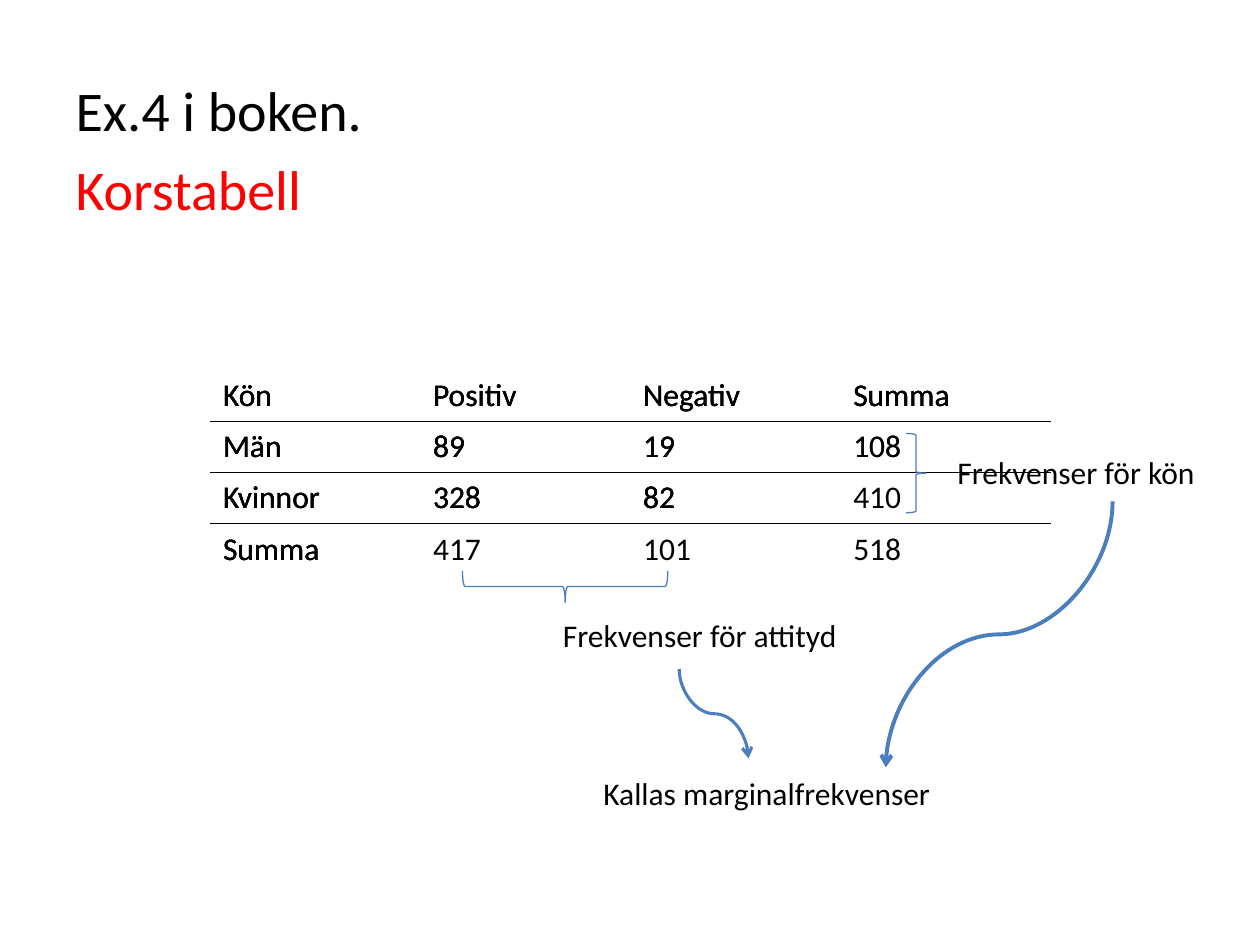
from lxml.etree import SubElement
from pptx import Presentation
from pptx.dml.color import RGBColor
from pptx.enum.shapes import MSO_CONNECTOR, MSO_SHAPE
from pptx.enum.text import MSO_ANCHOR, MSO_AUTO_SIZE, PP_ALIGN
from pptx.oxml import parse_xml
from pptx.oxml.ns import nsdecls, qn
from pptx.util import Inches, Pt

COLORS = {"text": "000000", "accent": "FF0000", "line": "4B7EBC"}
FONT = "Calibri"
NO_STYLE = "{2D5ABB26-0587-4C30-8999-92F81FD0307C}"

ROWS = [
    ["Kön", "Positiv", "Negativ", "Summa"],
    ["Män", "89", "19", "108"],
    ["Kvinnor", "328", "82", "410"],
    ["Summa", "417", "101", "518"],
]
RULED_ROWS = (1, 3)
# Cells left blank in each successive layer of the table
MARGINAL_CELLS = {(1, 3), (2, 3), (3, 1), (3, 2), (3, 3)}
BLANK_CELLS = [MARGINAL_CELLS, MARGINAL_CELLS - {(1, 3)}, set()]


def format_paragraph(paragraph, size, color="text"):
    paragraph.font.name = FONT
    paragraph.font.size = Pt(size)
    paragraph.font.bold = False
    paragraph.font.color.rgb = RGBColor.from_string(COLORS[color])


def place_title(slide, left, top, width, height):
    title = slide.shapes.title
    title.left, title.top = Inches(left), Inches(top)
    title.width, title.height = Inches(width), Inches(height)
    frame = title.text_frame
    frame.text = "Ex.4 i boken.\nKorstabell"
    frame.vertical_anchor = MSO_ANCHOR.TOP
    frame.auto_size = MSO_AUTO_SIZE.NONE
    frame.word_wrap = True
    for paragraph, color in zip(frame.paragraphs, ("text", "accent")):
        format_paragraph(paragraph, 32, color)
        paragraph.alignment = PP_ALIGN.LEFT
        paragraph.space_before = Pt(6.4)
        properties = paragraph._p.get_or_add_pPr()
        properties.set("marL", str(Inches(0.38)))
        properties.set("indent", str(Inches(-0.38)))


def add_top_rule(cell):
    rule = parse_xml(
        f'<a:lnT {nsdecls("a")} w="{Pt(1)}"><a:solidFill>'
        f'<a:srgbClr val="{COLORS["text"]}"/></a:solidFill></a:lnT>'
    )
    cell._tc.get_or_add_tcPr().insert(0, rule)


def place_cross_table(slide, left, top, width, height, blank_cells):
    table = slide.shapes.add_table(
        len(ROWS), len(ROWS[0]),
        Inches(left), Inches(top), Inches(width), Inches(height),
    ).table
    table.first_row = table.horz_banding = False
    table._tbl.tblPr.find(qn("a:tableStyleId")).text = NO_STYLE
    for row, values in enumerate(ROWS):
        for column, value in enumerate(values):
            cell = table.cell(row, column)
            cell.fill.background()
            if (row, column) not in blank_cells:
                cell.text = value
            format_paragraph(cell.text_frame.paragraphs[0], 18)
            if row in RULED_ROWS:
                add_top_rule(cell)


def place_label(slide, text, left, top, width, height=0.4):
    label = slide.shapes.add_textbox(
        Inches(left), Inches(top), Inches(width), Inches(height))
    frame = label.text_frame
    frame.text = text
    frame.word_wrap = False
    frame.auto_size = MSO_AUTO_SIZE.SHAPE_TO_FIT_TEXT
    format_paragraph(frame.paragraphs[0], 18)


def place_brace(slide, left, top, width, height, rotation=0):
    brace = slide.shapes.add_shape(
        MSO_SHAPE.RIGHT_BRACE,
        Inches(left), Inches(top), Inches(width), Inches(height))
    brace.rotation = rotation
    brace.shadow.inherit = False
    brace.fill.background()
    brace.line.color.rgb = RGBColor.from_string(COLORS["line"])
    brace.line.width = Pt(0.75)


def place_curved_arrow(slide, start, end, weight):
    """Draw an S-curve that leaves and arrives vertically."""
    (start_x, start_y), (end_x, end_y) = start, end
    middle_x, middle_y = (start_x + end_x) / 2, (start_y + end_y) / 2
    # The frame lies on its side, so its width is the drop of the arrow
    half_width, half_height = (end_y - start_y) / 2, abs(end_x - start_x) / 2
    arrow = slide.shapes.add_connector(
        MSO_CONNECTOR.CURVE,
        Inches(middle_x - half_width), Inches(middle_y - half_height),
        Inches(middle_x + half_width), Inches(middle_y + half_height),
    )
    arrow.line.color.rgb = RGBColor.from_string(COLORS["line"])
    arrow.line.width = Pt(weight)
    properties = arrow._element.spPr
    transform = properties.find(qn("a:xfrm"))
    if end_x < start_x:
        transform.set("rot", str(90 * 60000))
    else:
        transform.set("rot", str(270 * 60000))
        transform.set("flipH", "1")
    SubElement(properties.find(qn("a:ln")), qn("a:tailEnd"), type="arrow")
    SubElement(properties, qn("a:effectLst"))


def place_notes(slide):
    place_label(slide, "Kallas marginalfrekvenser", 4.69, 6.09, 2.82)
    # Row totals
    place_brace(slide, 7.19, 3.44, 0.16, 0.63)
    place_label(slide, "Frekvenser för kön", 7.5, 3.55, 2.11)
    # Column totals
    place_brace(slide, 4.36, 3.84, 0.25, 1.63, rotation=90)
    place_label(slide, "Frekvenser för attityd", 4.37, 4.84, 2.4)
    # Arrows to the common term
    place_curved_arrow(slide, (8.83, 3.98), (7.03, 6.09), 2.25)
    place_curved_arrow(slide, (5.39, 5.31), (5.94, 6.02), 1.75)


def main():
    presentation = Presentation()
    presentation.slide_width = Inches(10)
    presentation.slide_height = Inches(7.5)
    slide = presentation.slides.add_slide(presentation.slide_layouts[5])
    place_title(slide, 0.5, 0.55, 9, 1.41)
    for blank_cells in BLANK_CELLS:
        place_cross_table(slide, 1.67, 2.94, 6.67, 1.62, blank_cells)
    place_notes(slide)
    presentation.save("out.pptx")


if __name__ == "__main__":
    main()
